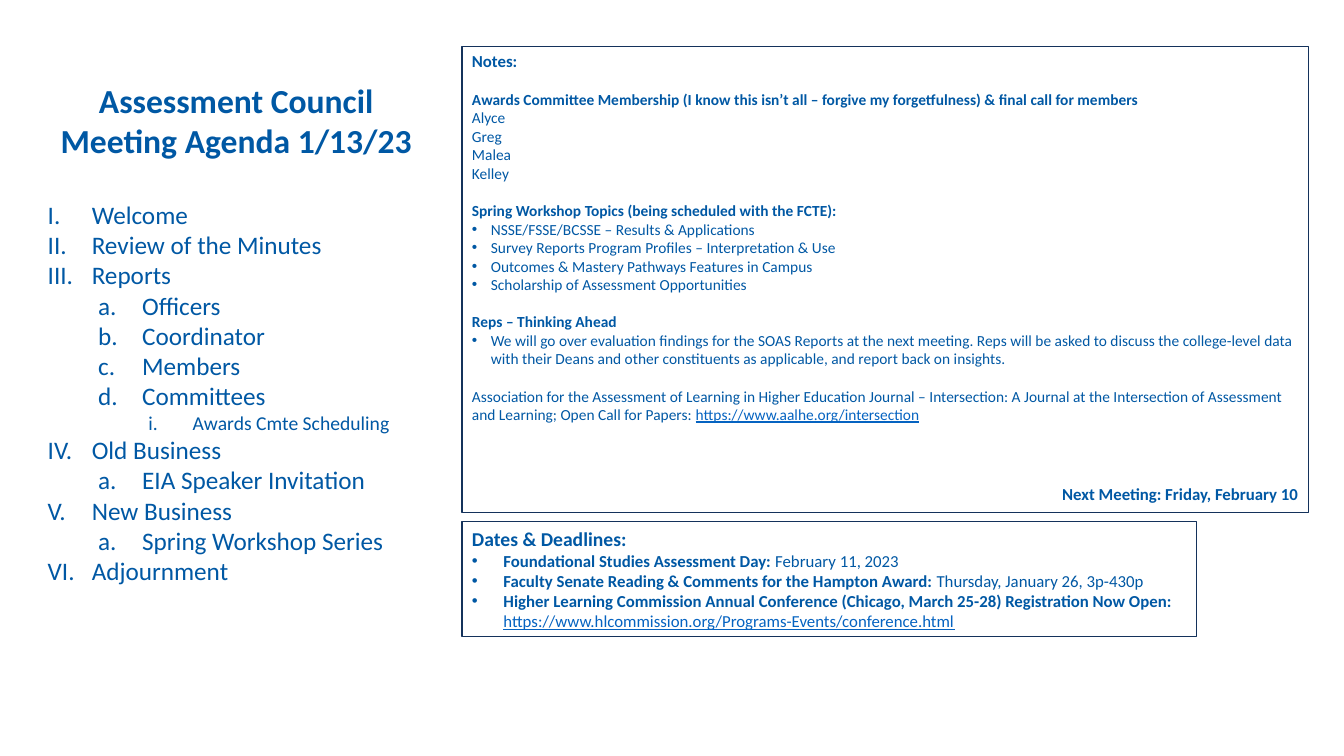
from lxml import etree
from pptx import Presentation
from pptx.dml.color import RGBColor
from pptx.enum.shapes import MSO_SHAPE
from pptx.enum.text import MSO_ANCHOR, MSO_AUTO_SIZE, PP_ALIGN
from pptx.oxml.ns import qn
from pptx.util import Emu, Pt

PX = 9525
FONT = "Calibri"
BLUE = RGBColor(0x00, 0x58, 0xA4)
LINK_BLUE = RGBColor(0x05, 0x63, 0xC1)
NAVY = RGBColor(0x14, 0x32, 0x5B)
RECTANGLE = MSO_SHAPE.RECTANGLE
TOP = MSO_ANCHOR.TOP
GROW = MSO_AUTO_SIZE.SHAPE_TO_FIT_TEXT
LEFT, CENTER, RIGHT = PP_ALIGN.LEFT, PP_ALIGN.CENTER, PP_ALIGN.RIGHT

BOLD = {"bold": True}
LINK = {"underline": True, "color": LINK_BLUE}
NUMBERING = ("romanUcPeriod", "alphaLcPeriod", "romanLcPeriod")
LEVEL_SIZES = (18, 18, 14)

TITLE = ("Assessment Council", "Meeting Agenda 1/13/23")
AGENDA = (
    (0, "Welcome"),
    (0, "Review of the Minutes"),
    (0, "Reports"),
    (1, "Officers"),
    (1, "Coordinator"),
    (1, "Members"),
    (1, "Committees"),
    (2, "Awards Cmte Scheduling"),
    (0, "Old Business"),
    (1, "EIA Speaker Invitation"),
    (0, "New Business"),
    (1, "Spring Workshop Series"),
    (0, "Adjournment"),
)
AWARDS_HEADING = (
    "Awards Committee Membership (I know this isn’t all – forgive my "
    "forgetfulness) & final call for members"
)
AWARDS_MEMBERS = ("Alyce", "Greg", "Malea", "Kelley")
WORKSHOP_HEADING = "Spring Workshop Topics (being scheduled with the FCTE):"
WORKSHOP_TOPICS = (
    "NSSE/FSSE/BCSSE – Results & Applications",
    "Survey Reports Program Profiles – Interpretation & Use",
    "Outcomes & Mastery Pathways Features in Campus",
    "Scholarship of Assessment Opportunities",
)
REPS_HEADING = "Reps – Thinking Ahead"
REPS_NOTES = (
    "We will go over evaluation findings for the SOAS Reports at the next "
    "meeting. Reps will be asked to discuss the college-level data with their "
    "Deans and other constituents as applicable, and report back on insights.",
)
NOTE_SECTIONS = (
    (AWARDS_HEADING, AWARDS_MEMBERS, None),
    (WORKSHOP_HEADING, WORKSHOP_TOPICS, "•"),
    (REPS_HEADING, REPS_NOTES, "•"),
)
JOURNAL_CALL = (
    ("Association for the Assessment of Learning in Higher Education Journal – "
     "Intersection: A Journal at the Intersection of Assessment and Learning; "
     "Open Call for Papers: ", {}),
    ("https://www.aalhe.org/intersection", LINK),
)
NEXT_MEETING = "Next Meeting: Friday, February 10"
DEADLINES = (
    (("Foundational Studies Assessment Day: ", BOLD), ("February 11, 2023", {})),
    (("Faculty Senate Reading & Comments for the Hampton Award:", BOLD),
     (" Thursday, January 26, 3p-430p", {})),
    (("Higher Learning Commission Annual Conference (Chicago, March 25-28) "
      "Registration Now Open: ", BOLD),
     ("https://www.hlcommission.org/Programs-Events/conference.html", LINK)),
)


def set_up_frame(shape):
    frame = shape.text_frame
    values = {"word_wrap": True, "auto_size": GROW, "vertical_anchor": TOP}
    for name, value in values.items():
        setattr(frame, name, value)
    return frame


def add_text_box(page, box):
    return set_up_frame(page.shapes.add_textbox(*(Emu(n * PX) for n in box)))


def add_outlined_box(page, box):
    shape = page.shapes.add_shape(RECTANGLE, *(Emu(n * PX) for n in box))
    shape.shadow.inherit = False
    shape.fill.background()
    shape.line.color.rgb = NAVY
    shape.line.width = Pt(0.75)
    return set_up_frame(shape)


def add_marker(para, indent, hanging, bullet=None, numbering=None):
    """Give the paragraph a hanging bullet or automatic number."""
    properties = para._p.get_or_add_pPr()
    properties.set("marL", str(indent * PX))
    properties.set("indent", str(-hanging * PX))
    if numbering:
        etree.SubElement(properties, qn("a:buAutoNum")).set("type", numbering)
    else:
        etree.SubElement(properties, qn("a:buFont")).set("typeface", "Arial")
        etree.SubElement(properties, qn("a:buChar")).set("char", bullet)


def add_para(frame, spans, size, align=LEFT, before=0, level=0, marker=None):
    """Append a paragraph of (text, format) spans, filling the empty first one."""
    first = frame.paragraphs[0]
    para = frame.add_paragraph() if first.runs else first
    if marker:
        add_marker(para, **marker)
    para.alignment = align
    para.level = level
    if before:
        para.space_before = Pt(before)
    for text, changes in spans:
        span = para.add_run()
        span.text = text
        values = {"name": FONT, "size": Pt(size), "bold": False, "color": BLUE, **changes}
        span.font.color.rgb = values.pop("color")
        for name, value in values.items():
            setattr(span.font, name, value)


def add_title(page, box):
    frame = add_text_box(page, box)
    for line in TITLE:
        add_para(frame, [(line, BOLD)], 24, align=CENTER)


def add_agenda(page, box):
    frame = add_text_box(page, box)
    for level, item in AGENDA:
        marker = {"indent": 42 + 48 * level, "hanging": 42, "numbering": NUMBERING[level]}
        add_para(frame, [(item, {})], LEVEL_SIZES[level], level=level, marker=marker)


def add_notes(page, box):
    frame = add_outlined_box(page, box)
    section_gap = 13.4
    add_para(frame, [("Notes:", BOLD)], 12)
    for heading, items, bullet in NOTE_SECTIONS:
        add_para(frame, [(heading, BOLD)], 11, before=section_gap)
        marker = {"indent": 18, "hanging": 18, "bullet": bullet} if bullet else None
        for item in items:
            add_para(frame, [(item, {})], 11, marker=marker)
    add_para(frame, JOURNAL_CALL, 11, before=section_gap)
    add_para(frame, [(NEXT_MEETING, BOLD)], 12, align=RIGHT, before=43)


def add_deadlines(page, box):
    frame = add_outlined_box(page, box)
    add_para(frame, [("Dates & Deadlines:", BOLD)], 14)
    marker = {"indent": 30, "hanging": 30, "bullet": "•"}
    for spans in DEADLINES:
        add_para(frame, spans, 12, marker=marker)


def main():
    deck = Presentation()
    deck.slide_width, deck.slide_height = Emu(1280 * PX), Emu(720 * PX)
    page = deck.slides.add_slide(deck.slide_layouts[6])
    add_agenda(page, (36, 185, 380, 381))
    add_title(page, (-12, 71, 474, 87))
    add_notes(page, (440, 44, 806, 444))
    add_deadlines(page, (440, 497, 700, 109))
    deck.save("out.pptx")


if __name__ == "__main__":
    main()
